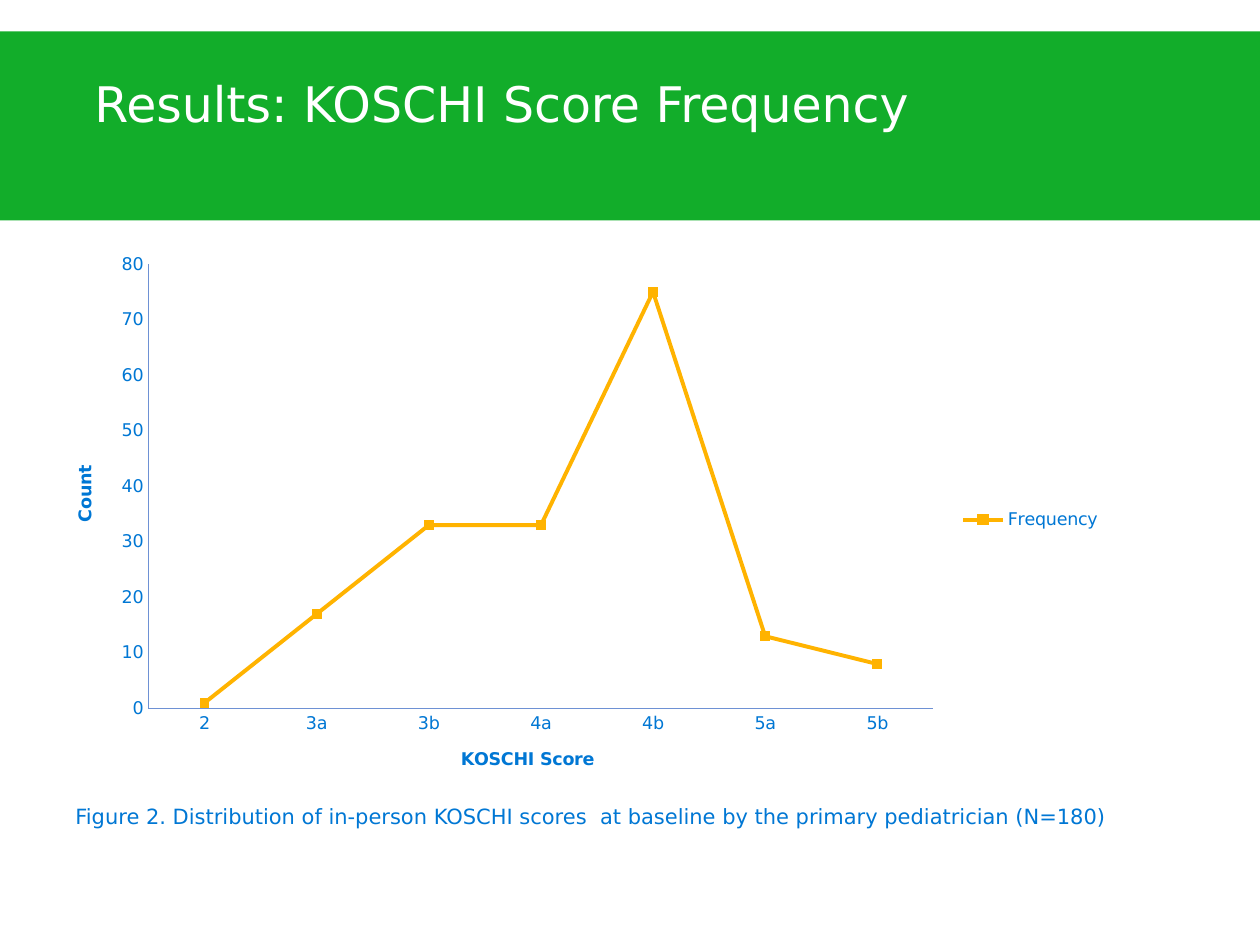
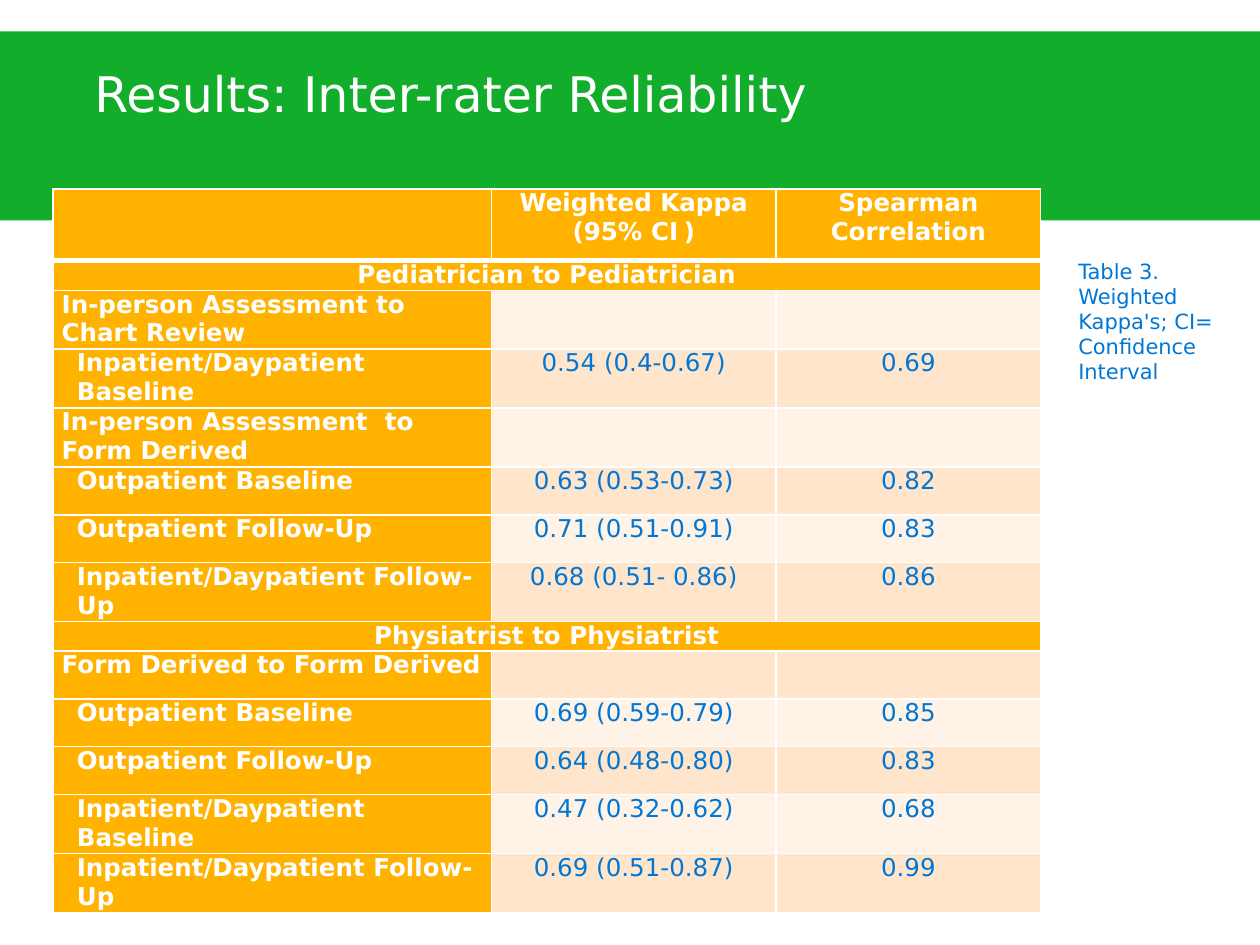
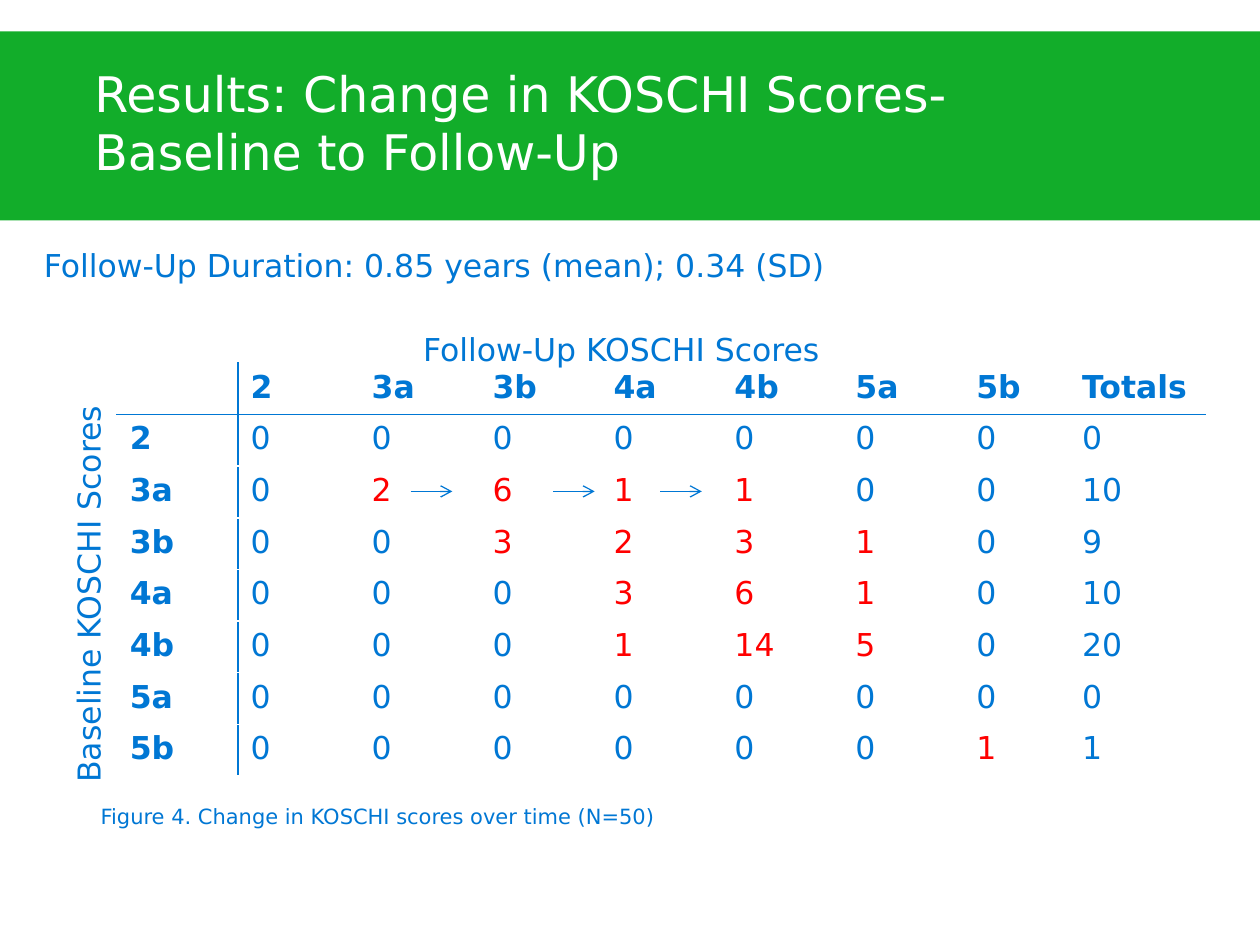
from lxml import etree
from pptx import Presentation
from pptx.chart.data import CategoryChartData
from pptx.dml.color import RGBColor
from pptx.enum.chart import XL_CHART_TYPE, XL_LEGEND_POSITION, XL_MARKER_STYLE, XL_TICK_MARK
from pptx.enum.shapes import MSO_CONNECTOR, MSO_SHAPE
from pptx.enum.text import PP_ALIGN
from pptx.oxml.ns import qn
from pptx.util import Inches, Pt

LINE_MARKERS = XL_CHART_TYPE.LINE_MARKERS
LEGEND_RIGHT = XL_LEGEND_POSITION.RIGHT
SQUARE = XL_MARKER_STYLE.SQUARE
NO_TICK = XL_TICK_MARK.NONE
STRAIGHT = MSO_CONNECTOR.STRAIGHT
RECTANGLE = MSO_SHAPE.RECTANGLE
LEFT, CENTER = PP_ALIGN.LEFT, PP_ALIGN.CENTER

FONT = "DejaVu Sans"
WHITE, GREEN, BLUE = "FFFFFF", "12AD2A", "0077D4"
AMBER, RED, AXIS_BLUE = "FFB300", "FF0000", "6E91D4"
LIGHT_BAND, DARK_BAND = "FFF2E7", "FFE5CC"


def rgb(value):
    return RGBColor.from_string(value)


def style_font(font, size, color, bold=False):
    font.name, font.size, font.bold = FONT, Pt(size), bold
    font.color.rgb = rgb(color)


def write(para, text, size=18, color=BLUE, bold=False, align=LEFT, indent=0):
    """Add one run to a paragraph; an empty text only sets the line size."""
    para.alignment = align
    if indent:
        properties = para._p.get_or_add_pPr()
        properties.set("marL", str(Inches(indent)))
        properties.set("indent", "0")
    if text:
        span = para.add_run()
        span.text = text
        style_font(span.font, size, color, bold)
    else:
        etree.SubElement(para._p, qn("a:endParaRPr")).set("sz", str(size * 100))


def draw_borders(cell, left, right, top, bottom):
    """Each border is a pair of colour and width in points."""
    properties = cell._tc.get_or_add_tcPr()
    sides = {"a:lnL": left, "a:lnR": right, "a:lnT": top, "a:lnB": bottom}
    for tag, (color, width) in sides.items():
        line = etree.SubElement(properties, qn(tag), w=str(Pt(width)))
        fill = etree.SubElement(line, qn("a:solidFill"))
        etree.SubElement(fill, qn("a:srgbClr"), val=color)


class Report:
    def __init__(self):
        self.deck = Presentation()
        self.deck.slide_width, self.deck.slide_height = Inches(10), Inches(7.5)
        self.page = None

    def add_page(self, title, title_top=0.5):
        self.page = self.deck.slides.add_slide(self.deck.slide_layouts[6])
        band = self.page.shapes.add_shape(
            RECTANGLE, 0, Inches(0.25), Inches(10), Inches(1.5))
        band.shadow.inherit = False
        band.fill.solid()
        band.fill.fore_color.rgb = rgb(GREEN)
        band.line.fill.background()
        box = self.add_text(title, 0.75, title_top, 8.5, 1.25, size=28, color=WHITE)
        frame = box.text_frame
        frame.margin_left = frame.margin_right = frame.margin_top = frame.margin_bottom = 0

    def add_text(self, text, left, top, width, height, **style):
        box = self.page.shapes.add_textbox(
            Inches(left), Inches(top), Inches(width), Inches(height))
        box.text_frame.word_wrap = True
        write(box.text_frame.paragraphs[0], text, **style)
        return box

    def add_table(self, left, top, widths, heights):
        frame = self.page.shapes.add_table(
            len(heights), len(widths), Inches(left), Inches(top),
            Inches(sum(widths)), Inches(sum(heights)))
        table = frame.table
        table.first_row = table.horz_banding = False
        for column, width in zip(table.columns, widths):
            column.width = Inches(width)
        for row, height in zip(table.rows, heights):
            row.height = Inches(height)
        return table

    def fill_cell(self, cell, text, fill, borders, margins=(0.1, 0.05), **style):
        cell.margin_left = cell.margin_right = Inches(margins[0])
        cell.margin_top = cell.margin_bottom = Inches(margins[1])
        draw_borders(cell, *borders)
        cell.fill.solid()
        cell.fill.fore_color.rgb = rgb(fill)
        write(cell.text_frame.paragraphs[0], text, **style)

    def add_arrow(self, left, top, length):
        arrow = self.page.shapes.add_connector(
            STRAIGHT, Inches(left), Inches(top), Inches(left + length), Inches(top))
        arrow.line.color.rgb = rgb(BLUE)
        arrow.line.width = Pt(0.75)
        etree.SubElement(arrow.line._get_or_add_ln(), qn("a:tailEnd"), type="arrow")
        etree.SubElement(arrow._element.spPr, qn("a:effectLst"))

    def add_line_chart(self, left, top, width, height, categories, name, values):
        data = CategoryChartData()
        data.categories = categories
        data.add_series(name, values)
        chart = self.page.shapes.add_chart(
            LINE_MARKERS, Inches(left), Inches(top), Inches(width), Inches(height), data).chart
        style_font(chart.font, 10, BLUE)
        chart.has_title = False
        chart.has_legend = True
        chart.legend.position = LEGEND_RIGHT
        chart.legend.include_in_layout = False
        chart.plots[0].vary_by_categories = False

        series = chart.plots[0].series[0]
        series.smooth = False
        series.format.line.color.rgb = rgb(AMBER)
        series.format.line.width = Pt(2.25)
        series.marker.style, series.marker.size = SQUARE, 5
        series.marker.format.fill.solid()
        series.marker.format.fill.fore_color.rgb = rgb(AMBER)
        series.marker.format.line.color.rgb = rgb(AMBER)
        return chart

    def style_axis(self, axis, title):
        axis.has_major_gridlines = False
        axis.major_tick_mark = axis.minor_tick_mark = NO_TICK
        axis.format.line.color.rgb = rgb(AXIS_BLUE)
        axis.format.line.width = Pt(0.75)
        write(axis.axis_title.text_frame.paragraphs[0], title, size=10, bold=True, align=CENTER)

    def place_plot(self, chart, **fractions):
        area = chart._chartSpace.chart.plotArea
        for old in area.findall(qn("c:layout")):
            area.remove(old)
        layout = etree.Element(qn("c:layout"))
        area.insert(0, layout)
        manual = etree.SubElement(layout, qn("c:manualLayout"))
        settings = {"layoutTarget": "inner", "xMode": "edge", "yMode": "edge", **fractions}
        for tag, value in settings.items():
            etree.SubElement(manual, qn("c:" + tag), val=str(value))


def frequency_page(report):
    report.add_page("Results: KOSCHI Score Frequency", title_top=0.58)
    report.add_text(
        "Figure 2. Distribution of in-person KOSCHI scores  at baseline "
        "by the primary pediatrician (N=180)", 0.5, 6.33, 8.92, 0.3, size=12)
    chart = report.add_line_chart(
        0.42, 1.92, 8.42, 4.41, ["2", "3a", "3b", "4a", "4b", "5a", "5b"],
        "Frequency", [1, 17, 33, 33, 75, 13, 8])
    report.style_axis(chart.category_axis, "KOSCHI Score")
    report.style_axis(chart.value_axis, "Count")
    chart.value_axis.minimum_scale, chart.value_axis.maximum_scale = 0, 80
    chart.value_axis.major_unit = 10
    report.place_plot(chart, x=0.09, y=0.04, w=0.74, h=0.8)


def reliability_page(report):
    report.add_page("Results: Inter-rater Reliability")
    report.add_text("Table 3. Weighted Kappa's; CI= Confidence Interval",
                    8.46, 2, 1.5, 1.11, size=12)
    # Rows with one entry are section bands; rows with values are indented
    rows = [
        ("", "Weighted Kappa (95% CI", "Spearman Correlation"),
        ("Pediatrician to Pediatrician",),
        ("In-person Assessment to Chart Review", "", ""),
        ("Inpatient/Daypatient Baseline", "0.54 (0.4-0.67)", "0.69"),
        ("In-person Assessment  to Form Derived", "", ""),
        ("Outpatient Baseline", "0.63 (0.53-0.73)", "0.82"),
        ("Outpatient Follow-Up", "0.71 (0.51-0.91)", "0.83"),
        ("Inpatient/Daypatient Follow-Up", "0.68 (0.51- 0.86)", "0.86"),
        ("Physiatrist to Physiatrist",),
        ("Form Derived to Form Derived", "", ""),
        ("Outpatient Baseline", "0.69 (0.59-0.79)", "0.85"),
        ("Outpatient Follow-Up", "0.64 (0.48-0.80)", "0.83"),
        ("Inpatient/Daypatient Baseline", "0.47 (0.32-0.62)", "0.68"),
        ("Inpatient/Daypatient Follow-Up", "0.69 (0.51-0.87)", "0.99"),
    ]
    heights = [0.57] + [0.19 if len(row) == 1 else 0.38 for row in rows[1:]]
    table = report.add_table(0.42, 1.5, [3.48, 2.26, 2.1], heights)
    thin, thick = (WHITE, 1), (WHITE, 3)
    for r, row in enumerate(rows):
        section = len(row) == 1
        borders = (thin, thin, thick if r == 1 else thin, thick if r == 0 else thin)
        for c in range(3):
            label = r == 0 or c == 0 or section
            band = DARK_BAND if r % 2 else LIGHT_BAND
            report.fill_cell(
                table.cell(r, c), row[c] if c < len(row) else "",
                AMBER if label else band, borders, margins=(0.07, 0),
                size=14, color=WHITE if label else BLUE, bold=label,
                align=CENTER if c or section else LEFT,
                indent=0.12 if r and c == 0 and not section and row[1] else 0)
        if section:
            table.cell(r, 0).merge(table.cell(r, 2))
    # The heading closes with a small fixed space before the bracket
    heading = table.cell(0, 1).text_frame.paragraphs[0]
    for text, size in ((" ", 9), (")", 14)):
        write(heading, text, size=size, color=WHITE, bold=True, align=CENTER)


def change_page(report):
    report.add_page("Results: Change in KOSCHI Scores- Baseline to Follow-Up")
    scores = ["2", "3a", "3b", "4a", "4b", "5a", "5b"]
    counts = [
        [0, 0, 0, 0, 0, 0, 0],
        [0, 2, 6, 1, 1, 0, 0],
        [0, 0, 3, 2, 3, 1, 0],
        [0, 0, 0, 3, 6, 1, 0],
        [0, 0, 0, 1, 14, 5, 0],
        [0, 0, 0, 0, 0, 0, 0],
        [0, 0, 0, 0, 0, 0, 1],
    ]
    rows = [["", *scores, "Totals"]]
    rows += [[score, *line, sum(line)] for score, line in zip(scores, counts)]
    table = report.add_table(0.93, 2.88, [0.96] * 7 + [0.84, 1.08], [0.41] * len(rows))
    plain, rule = (WHITE, 1), (BLUE, 1)
    for r, row in enumerate(rows):
        for c, value in enumerate(row):
            heading = r == 0 or c == 0
            changed = not heading and c <= len(scores) and value > 0
            borders = (rule if c == 1 else plain, rule if c == 0 else plain,
                       rule if r == 1 else plain, rule if r == 0 else plain)
            report.fill_cell(table.cell(r, c), str(value), WHITE, borders,
                             color=RED if changed else BLUE, bold=heading)

    # Axis names, caption and arrows along the 3a row
    report.add_text("Follow-Up KOSCHI Scores", 3.26, 2.57, 4.5, 0.4)
    side = report.add_text("Baseline KOSCHI Scores", -1.07, 4.34, 3.54, 0.4)
    side.rotation = 270
    report.add_text("Figure 4. Change in KOSCHI scores over time (N=50)",
                    0.7, 6.33, 5.05, 0.3, size=12)
    for left in (3.26, 4.39, 5.24):
        report.add_arrow(left, 3.9, 0.33)
    report.add_text("Follow-Up Duration: 0.85 years (mean); 0.34 (SD)", 0.25, 1.9, 7.33, 0.4)


def main():
    report = Report()
    frequency_page(report)
    reliability_page(report)
    change_page(report)
    report.deck.save("out.pptx")


if __name__ == "__main__":
    main()
